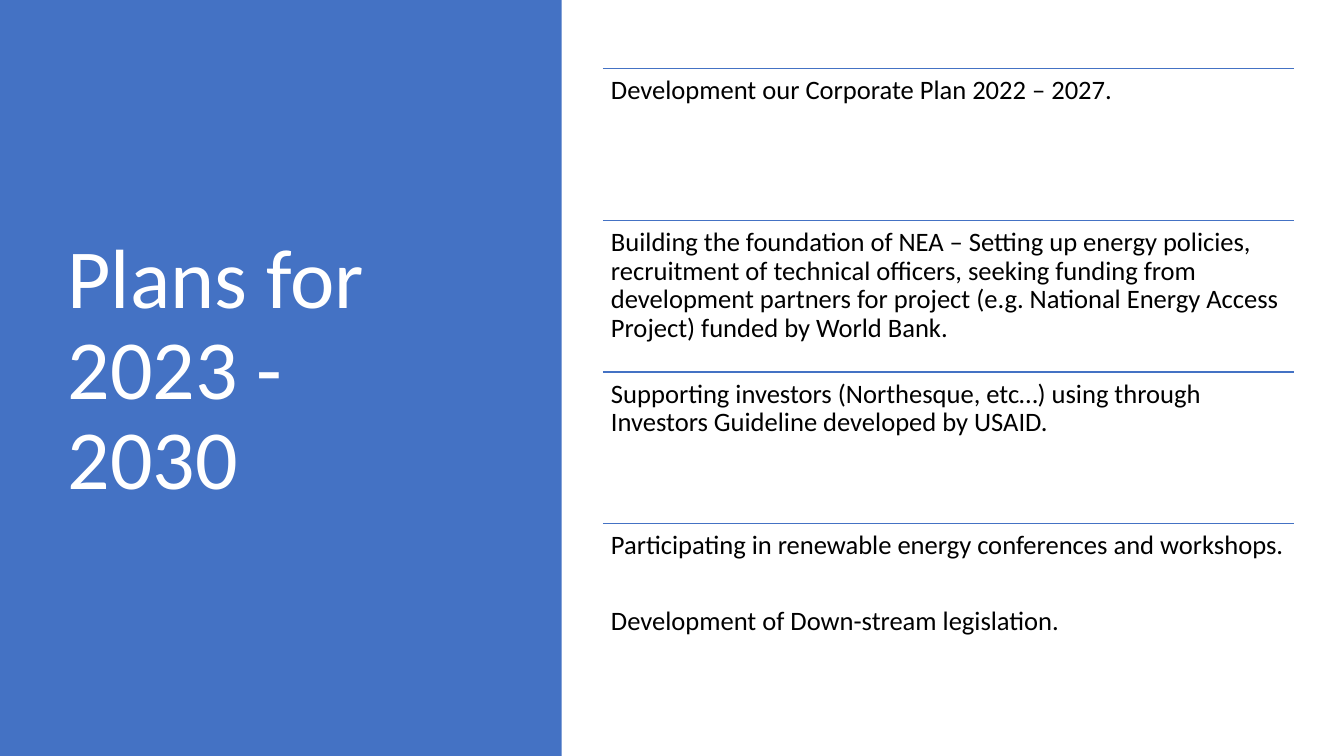
from lxml.etree import SubElement
from pptx import Presentation
from pptx.dml.color import RGBColor
from pptx.enum.shapes import MSO_CONNECTOR, MSO_SHAPE
from pptx.enum.text import MSO_ANCHOR, MSO_AUTO_SIZE, PP_ALIGN
from pptx.oxml.ns import qn
from pptx.util import Inches, Pt

HEADING = "Plans for 2023 - 2030"
PLANS = [
    ["Development our Corporate Plan 2022 – 2027."],
    ["Building the foundation of NEA – Setting up energy policies, recruitment of "
     "technical officers, seeking funding from development partners for project "
     "(e.g. National Energy Access Project) funded by World Bank."],
    ["Supporting investors (Northesque, etc…) using through Investors Guideline "
     "developed by USAID."],
    ["Participating in renewable energy conferences and workshops.",
     "Development of Down-stream legislation."],
]

BLUE = RGBColor(0x44, 0x72, 0xC4)
WHITE = RGBColor(0xFF, 0xFF, 0xFF)
BLACK = RGBColor(0x00, 0x00, 0x00)
FONT = "Calibri"

SLIDE_W, SLIDE_H = 13.33, 7.5
PANEL_W = 5.57
PLANS_LEFT, PLANS_TOP, PLANS_W, PLANS_H = 5.98, 0.68, 6.85, 6.02
ROW_H = PLANS_H / len(PLANS)


def write(frame, paragraphs, size, color, inset=0.1, anchor=MSO_ANCHOR.TOP, gap=0):
    """Fill a text frame with left-aligned paragraphs, gap points apart."""
    frame.word_wrap = True
    frame.auto_size = MSO_AUTO_SIZE.NONE
    frame.vertical_anchor = anchor
    frame.margin_left = frame.margin_right = Inches(inset)
    frame.margin_top = frame.margin_bottom = Inches(inset)
    for index, text in enumerate(paragraphs):
        paragraph = frame.paragraphs[0] if index == 0 else frame.add_paragraph()
        paragraph.alignment = PP_ALIGN.LEFT
        paragraph.line_spacing = 0.9
        paragraph.space_before = Pt(gap if index else 0)
        run = paragraph.add_run()
        run.text = text
        run.font.name = FONT
        run.font.size = Pt(size)
        run.font.color.rgb = color


def add_rule(shapes, top):
    rule = shapes.add_connector(
        MSO_CONNECTOR.STRAIGHT, Inches(PLANS_LEFT), Inches(top),
        Inches(PLANS_LEFT + PLANS_W), Inches(top))
    rule.line.color.rgb = BLUE
    rule.line.width = Pt(1)
    SubElement(rule.element.spPr, qn("a:effectLst"))


def main():
    prs = Presentation()
    prs.slide_width, prs.slide_height = Inches(SLIDE_W), Inches(SLIDE_H)
    shapes = prs.slides.add_slide(prs.slide_layouts.get_by_name("Title Only")).shapes

    heading = shapes.title
    heading.left, heading.top = Inches(0.57), Inches(PLANS_TOP)
    heading.width, heading.height = Inches(4.16), Inches(PLANS_H)
    write(heading.text_frame, [HEADING], 60, WHITE, anchor=MSO_ANCHOR.MIDDLE)

    panel = shapes.add_shape(MSO_SHAPE.RECTANGLE, 0, 0, Inches(PANEL_W), Inches(SLIDE_H))
    panel.shadow.inherit = False
    panel.fill.solid()
    panel.fill.fore_color.rgb = BLUE
    panel.line.fill.background()
    heading.element.addprevious(panel.element)  # keeps the heading in front

    for row, plan in enumerate(PLANS):
        top = PLANS_TOP + row * ROW_H
        add_rule(shapes, top)
        box = shapes.add_textbox(
            Inches(PLANS_LEFT), Inches(top), Inches(PLANS_W), Inches(ROW_H))
        write(box.text_frame, plan, 19, BLACK, inset=0.08, gap=33.5)

    prs.save("out.pptx")


if __name__ == "__main__":
    main()
